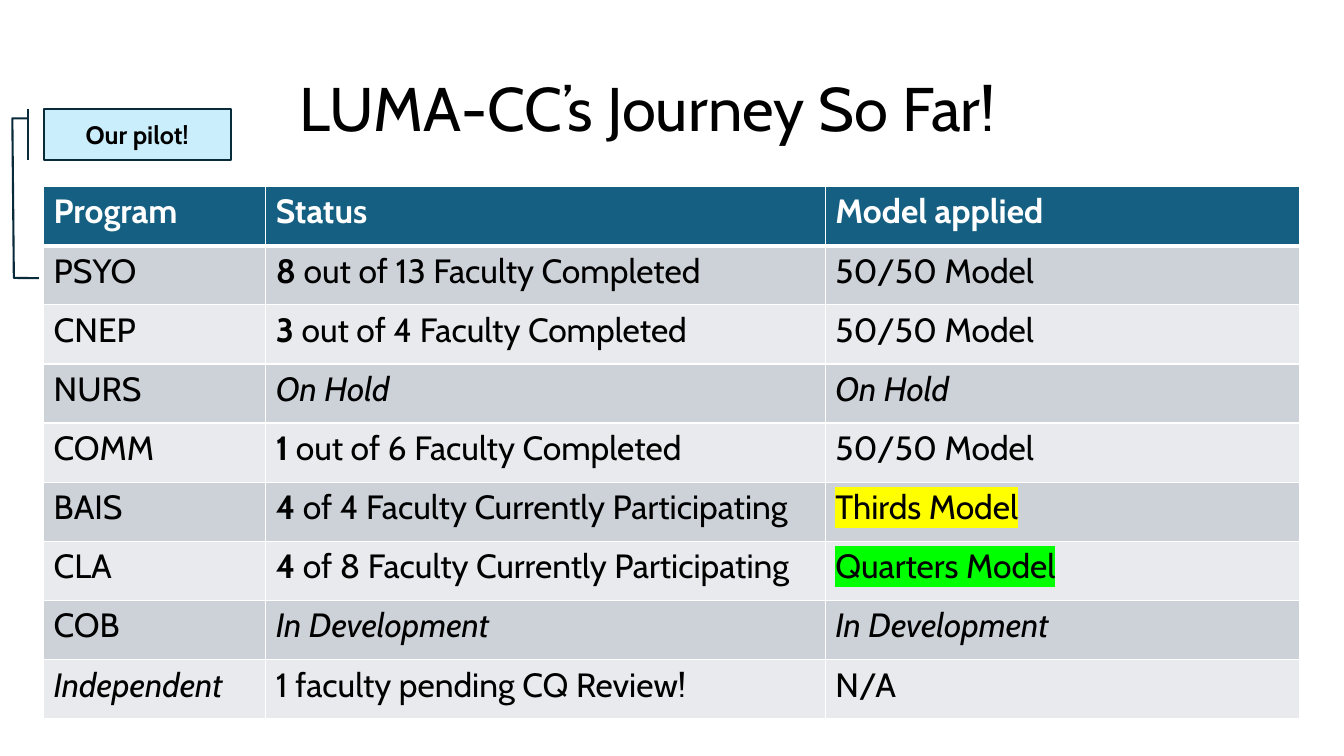
"""Build the slide that shows the progress of each program."""
from pptx import Presentation
from pptx.dml.color import RGBColor
from pptx.enum import shapes, text
from pptx.oxml import parse_xml
from pptx.oxml.ns import nsdecls, qn
from pptx.util import Cm, Pt

FONT = "Cabin"
BLACK, WHITE = "000000", "FFFFFF"
HEADER_FILL, BAND_FILLS = "156082", ("CCD2D8", "E8EAED")
COLUMN_WIDTHS = (5.6, 14.1, 11.95)
ROW_HEIGHT = 1.49
CALLOUT_POINTS = (0.188, -0.083, 0.188, -0.167, 3.28, -0.159, 3.285, -0.025)


def plain(words):
    """Return the runs of an unstyled cell."""
    return [(words, {})]


def italic(words):
    """Return the runs of an italic cell."""
    return [(words, {"italic": True})]


def marked(words, highlight):
    """Return the runs of a highlighted cell."""
    return [(words, {"highlight": highlight})]


def count(number, rest):
    """Return a bold number followed by plain words."""
    return [(number, {"bold": True}), (rest, {})]


PROGRAMS = [
    (plain("PSYO"), count("8", " out of 13 Faculty Completed"), plain("50/50 Model")),
    (plain("CNEP"), count("3", " out of 4 Faculty Completed"), plain("50/50 Model")),
    (plain("NURS"), italic("On Hold"), italic("On Hold")),
    (plain("COMM"), count("1", " out of 6 Faculty Completed"), plain("50/50 Model")),
    (plain("BAIS"), count("4", " of 4 Faculty Currently Participating"),
     marked("Thirds Model", "FFFF00")),
    (plain("CLA"), count("4", " of 8 Faculty Currently Participating"),
     marked("Quarters Model", "00FF00")),
    (plain("COB"), italic("In Development"), italic("In Development")),
    (italic("Independent"), plain("1 faculty pending CQ Review!"), plain("N/A")),
]
HEADER = [[(name, {"bold": True})] for name in ("Program", "Status", "Model applied")]


def colour(value):
    """Turn a hex string into a colour."""
    return RGBColor.from_string(value)


def format_run(span, size, ink=BLACK, bold=False, italic=False, highlight=None):
    """Set the font of one run."""
    font = span.font
    font.size, font.bold, font.italic = Pt(size), bold, italic
    font.color.rgb = colour(ink)
    font.name = FONT
    if highlight:
        mark = parse_xml(f'<a:highlight {nsdecls("a")}>'
                         f'<a:srgbClr val="{highlight}"/></a:highlight>')
        span._r.get_or_add_rPr().find(qn("a:latin")).addprevious(mark)


def border_cell(cell, **widths):
    """Draw white cell borders of the given widths in points."""
    properties = cell._tc.get_or_add_tcPr()
    for side in "LRTB":
        width = Pt(widths.get(side, 1))
        properties.append(parse_xml(
            f'<a:ln{side} {nsdecls("a")} w="{width}"><a:solidFill>'
            f'<a:srgbClr val="{WHITE}"/></a:solidFill></a:ln{side}>'))


def fill_cell(cell, runs, fill, ink):
    """Write the runs of a cell and paint it."""
    cell.fill.solid()
    cell.fill.fore_color.rgb = colour(fill)
    para = cell.text_frame.paragraphs[0]
    for words, style in runs:
        span = para.add_run()
        span.text = words
        format_run(span, 24, ink, **style)


def add_title(page, words):
    """Place and format the title."""
    title = page.shapes.title
    title.left, title.top, title.width, title.height = Cm(7.29), Cm(0.97), Cm(19.3), Cm(3.68)
    frame = title.text_frame
    frame.text = words
    frame.vertical_anchor = text.MSO_ANCHOR.MIDDLE
    para = frame.paragraphs[0]
    para.alignment = text.PP_ALIGN.LEFT
    para.line_spacing = 0.9
    format_run(para.runs[0], 44)


def add_program_table(page):
    """Add the table with a header and banded rows."""
    rows = [HEADER, *PROGRAMS]
    table = page.shapes.add_table(
        len(rows), len(COLUMN_WIDTHS), Cm(1.1), Cm(4.7),
        Cm(sum(COLUMN_WIDTHS)), Cm(ROW_HEIGHT * len(rows))).table
    for column, width in zip(table.columns, COLUMN_WIDTHS):
        column.width = Cm(width)
    for index, contents in enumerate(rows):
        table.rows[index].height = Cm(ROW_HEIGHT)
        fill = BAND_FILLS[(index - 1) % 2] if index else HEADER_FILL
        ink = BLACK if index else WHITE
        for cell, runs in zip(table.rows[index].cells, contents):
            border_cell(cell, T=3 if index == 1 else 1, B=1 if index else 3)
            fill_cell(cell, runs, fill, ink)


def add_callout(page, words):
    """Add the callout whose line leads to the first program."""
    box = page.shapes.add_shape(
        shapes.MSO_SHAPE.LINE_CALLOUT_3_BORDER_AND_ACCENT_BAR,
        Cm(1.1), Cm(2.74), Cm(4.72), Cm(1.3))
    for index, point in enumerate(CALLOUT_POINTS):
        box.adjustments[index] = point
    box.shadow.inherit = False
    box.fill.solid()
    box.fill.fore_color.rgb = colour("CAEEFB")
    box.line.color.rgb = colour("092A39")
    box.line.width = Pt(1.5)
    frame = box.text_frame
    frame.text = words
    frame.vertical_anchor = text.MSO_ANCHOR.MIDDLE
    para = frame.paragraphs[0]
    para.alignment = text.PP_ALIGN.CENTER
    format_run(para.runs[0], 18, bold=True)


def main():
    """Build and save the deck."""
    deck = Presentation()
    deck.slide_width, deck.slide_height = Cm(33.87), Cm(19.05)
    page = deck.slides.add_slide(deck.slide_layouts[5])
    add_title(page, "LUMA-CC’s Journey So Far!")
    add_program_table(page)
    add_callout(page, "Our pilot!")
    deck.save("out.pptx")


if __name__ == "__main__":
    main()
